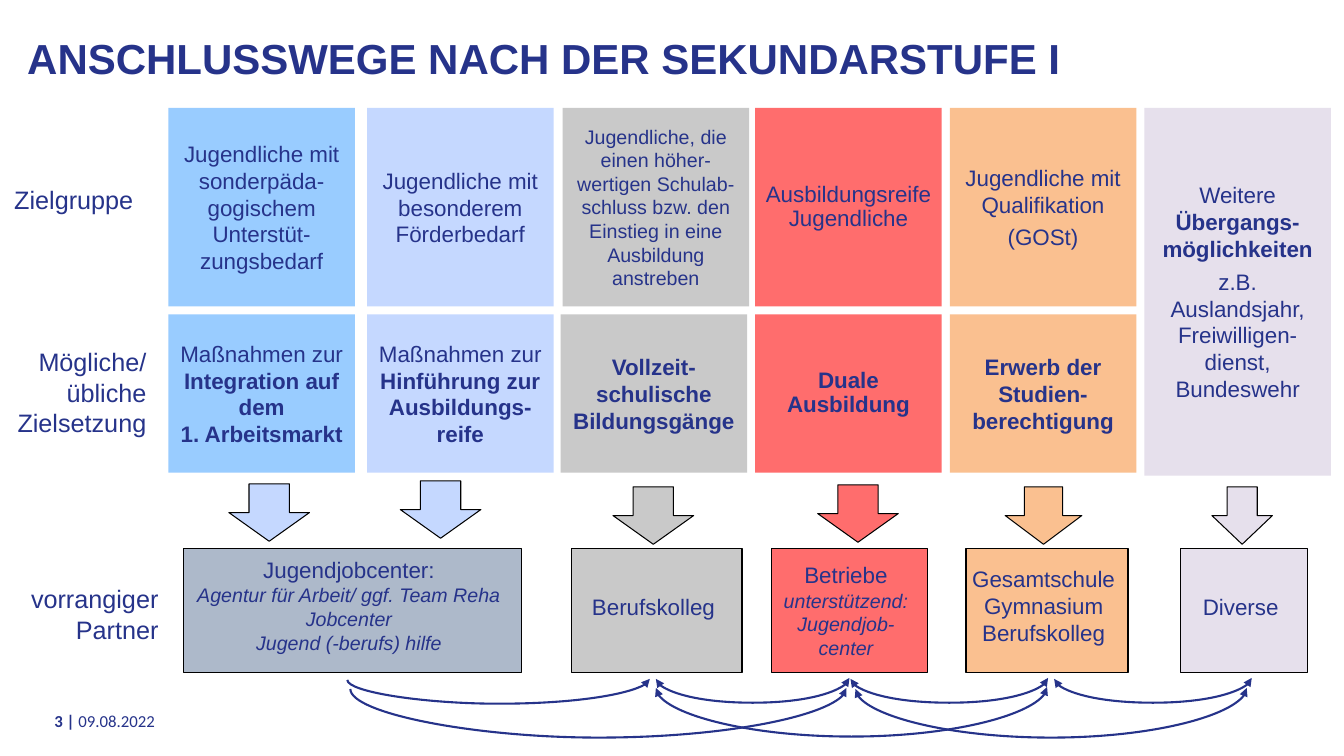
from dataclasses import dataclass

from lxml import etree
from pptx import Presentation
from pptx.dml.color import RGBColor
from pptx.enum.shapes import MSO_CONNECTOR, MSO_SHAPE
from pptx.enum.text import MSO_ANCHOR, MSO_AUTO_SIZE, PP_ALIGN
from pptx.oxml.ns import qn
from pptx.util import Pt

RECT, ARROW = MSO_SHAPE.RECTANGLE, MSO_SHAPE.DOWN_ARROW
CURVE = MSO_CONNECTOR.CURVE
MIDDLE, TOP = MSO_ANCHOR.MIDDLE, MSO_ANCHOR.TOP
LEFT, CENTER, RIGHT = PP_ALIGN.LEFT, PP_ALIGN.CENTER, PP_ALIGN.RIGHT
NOFIT = MSO_AUTO_SIZE.NONE
SCALE = 9144


@dataclass(frozen=True)
class Theme:
    font: str = "Arial"
    foot: str = "Calibri"
    ink: str = "26338A"
    edge: str = "000000"
    sky: str = "99CCFF"
    pale: str = "C5D8FF"
    gray: str = "C9C9C9"
    red: str = "FF6D6D"
    peach: str = "FAC090"
    lilac: str = "E6E0EC"
    steel: str = "ADB9CA"
    title: int = 30
    label: int = 18
    body: int = 16
    small: int = 14
    note: int = 12


THEME = Theme()
STYLES = {
    "plain": (THEME.body, False, False),
    "bold": (THEME.body, True, False),
    "small": (THEME.small, False, False),
    "slant": (THEME.small, False, True),
    "label": (THEME.label, False, False),
    "title": (THEME.title, True, False),
    "note": (THEME.note, False, False),
    "mark": (THEME.note, True, False),
}

COLS = [
    (167, 167, THEME.sky, [[("Jugendliche mit sonderpäda-gogischem Unterstüt-zungsbedarf", "plain")]],
     [[("Maßnahmen zur ", "plain"), ("Integration auf dem", "bold")], [("1. Arbeitsmarkt", "bold")]], 1),
    (364, 364, THEME.pale, [[("Jugendliche mit besonderem Förderbedarf", "plain")]],
     [[("Maßnahmen zur ", "plain"), ("Hinführung zur Ausbildungs-reife", "bold")]], 1),
    (558, 556, THEME.gray, [[("Jugendliche, die einen höher-wertigen Schulab-schluss bzw. den "
                              "Einstieg in eine Ausbildung anstreben", "small")]],
     [[("Vollzeit-schulische Bildungsgänge", "bold")]], 1),
    (749, 749, THEME.red, [[("Ausbildungsreife Jugendliche", "plain")]],
     [[("Duale Ausbildung", "bold")]], 0.9),
    (942, 942, THEME.peach, [[("Jugendliche mit Qualifikation", "plain")], [("(GOSt)", "plain")]],
     [[("Erwerb der Studien-berechtigung", "bold")]], 1),
]
OTHER = [[("Weitere ", "plain"), ("Übergangs-möglichkeiten", "bold")],
         [("z.B. Auslandsjahr, Freiwilligen-dienst, Bundeswehr", "plain")]]
ARROWS = [(227, 480, 80, THEME.pale), (397, 477, 80, THEME.pale), (608, 483, 80, THEME.gray),
          (811, 481, 80, THEME.red), (997, 483, 76, THEME.peach), (1202, 483, 60, THEME.lilac)]
PARTNERS = [
    (182, 335, THEME.steel, 15, [[("Jugendjobcenter:", "plain")],
                                [("Agentur für Arbeit/ ggf. Team Reha", "slant")],
                                [("Jobcenter", "slant")], [("Jugend (-berufs) hilfe", "slant")]]),
    (567, 169, THEME.gray, 12, [[("Berufskolleg", "plain")]]),
    (765, 155, THEME.red, 5, [[("Betriebe", "plain")], [("unterstützend:", "slant")],
                              [("Jugendjob-center", "slant")]]),
    (958, 161, THEME.peach, 15, [[("Gesamtschule", "plain")], [("Gymnasium", "plain")],
                                 [("Berufskolleg", "plain")]]),
    (1171, 126, THEME.lilac, 12, [[("Diverse", "plain")]]),
]
LABELS = [(3, 178, 139, 40, ["Zielgruppe"]),
          (6, 339, 149, 101, ["Mögliche/", "übliche", "Zielsetzung"]),
          (19, 574, 148, 71, ["vorrangiger", "Partner"])]
LINKS = [(344, 644, 674, 25, False), (650, 843, 673, 25, True), (843, 1039, 673, 25, True),
         (1045, 1242, 673, 25, True), (347, 840, 683, 50, False), (650, 1039, 682, 50, True),
         (848, 1237, 683, 50, True)]


def emu(*sizes):
    return [size * SCALE for size in sizes]


def rgb(tone):
    return RGBColor.from_string(tone)


def write(frame, paras, align=CENTER, gap=0, lead=1, font=THEME.font):
    for num, runs in enumerate(paras):
        para = frame.add_paragraph() if num else frame.paragraphs[0]
        para.alignment = align
        para.line_spacing = lead
        para.space_before = Pt(gap if num else 0)
        for text, style in runs:
            run = para.add_run()
            run.text = text
            size, bold, slant = STYLES[style]
            run.font.name, run.font.size = font, Pt(size)
            run.font.bold, run.font.italic = bold, slant
            run.font.color.rgb = rgb(THEME.ink)


def block(slide, box, kind, tone, edge=0):
    shape = slide.shapes.add_shape(kind, *emu(*box))
    shape.shadow.inherit = False
    shape.fill.solid()
    shape.fill.fore_color.rgb = rgb(tone)
    if edge:
        shape.line.color.rgb = rgb(THEME.edge)
        shape.line.width = Pt(edge)
    else:
        shape.line.fill.background()
    frame = shape.text_frame
    frame.word_wrap = True
    frame.vertical_anchor = MIDDLE
    return frame


def plain(slide, box, anchor):
    frame = slide.shapes.add_textbox(*emu(*box)).text_frame
    frame.word_wrap = True
    frame.vertical_anchor = anchor
    return frame


def head(slide, box):
    title = slide.shapes.title
    title.left, title.top, title.width, title.height = emu(*box)
    frame = title.text_frame
    frame.auto_size = NOFIT
    frame.vertical_anchor = MIDDLE
    write(frame, [[("ANSCHLUSSWEGE NACH DER SEKUNDARSTUFE I", "title")]], LEFT, lead=0.9)


def grid(slide, box):
    left, top, width, height = box
    for upper, lower, tone, group, goal, lead in COLS:
        for x, y, tall, paras in ((upper, 0, 197, group), (lower, 205, 157, goal)):
            frame = block(slide, (x, top + y, 185, tall), RECT, tone)
            write(frame, paras, gap=4 if paras is group else 0, lead=lead)
    frame = block(slide, (left + width - 185, top, 185, height), RECT, THEME.lilac)
    write(frame, OTHER, gap=4)


def partners(slide, box):
    top, height = box[1], box[3]
    for x, y, width, tone in ARROWS:
        block(slide, (x, y, width, 57), ARROW, tone, 0.75)
    for x, width, tone, pad, paras in PARTNERS:
        frame = block(slide, (x, top, width, height), RECT, tone, 1)
        frame.margin_left, frame.margin_right, frame.margin_bottom = emu(3, 10, pad)
        write(frame, paras)


def labels(slide):
    for *box, lines in LABELS:
        write(plain(slide, box, TOP), [[(line, "label")] for line in lines], RIGHT)


def link(slide, start, end, y, dip, both):
    mid, half = (start + end) // 2, (end - start) // 2
    line = slide.shapes.add_connector(CURVE, *emu(mid, y - half, mid + 1, y + half))
    line.line.color.rgb = rgb(THEME.ink)
    line.line.width = Pt(1.5)
    prop = line._element.spPr
    prop.find(qn("a:xfrm")).set("rot", "5400000")
    guides = prop.find(qn("a:prstGeom")).find(qn("a:avLst"))
    etree.SubElement(guides, qn("a:gd"), name="adj1", fmla=f"val {dip * 100000}")
    stroke = prop.find(qn("a:ln"))
    for tip in ("a:headEnd", "a:tailEnd")[:2 if both else 1]:
        etree.SubElement(stroke, qn(tip), type="triangle")
    etree.SubElement(prop, qn("a:effectLst"))


def foot(slide, box):
    write(plain(slide, box, MIDDLE), [[("3 | ", "mark"), ("09.08.2022", "note")]],
          LEFT, font=THEME.foot)


def main():
    deck = Presentation()
    deck.slide_width, deck.slide_height = emu(1333, 750)
    slide = deck.slides.add_slide(deck.slide_layouts[5])
    head(slide, (17, 21, 1254, 79))
    grid(slide, (167, 107, 1153, 365))
    partners(slide, (182, 544, 1115, 123))
    labels(slide)
    for item in LINKS:
        link(slide, *item)
    foot(slide, (44, 695, 181, 40))
    deck.save("out.pptx")


if __name__ == "__main__":
    main()
